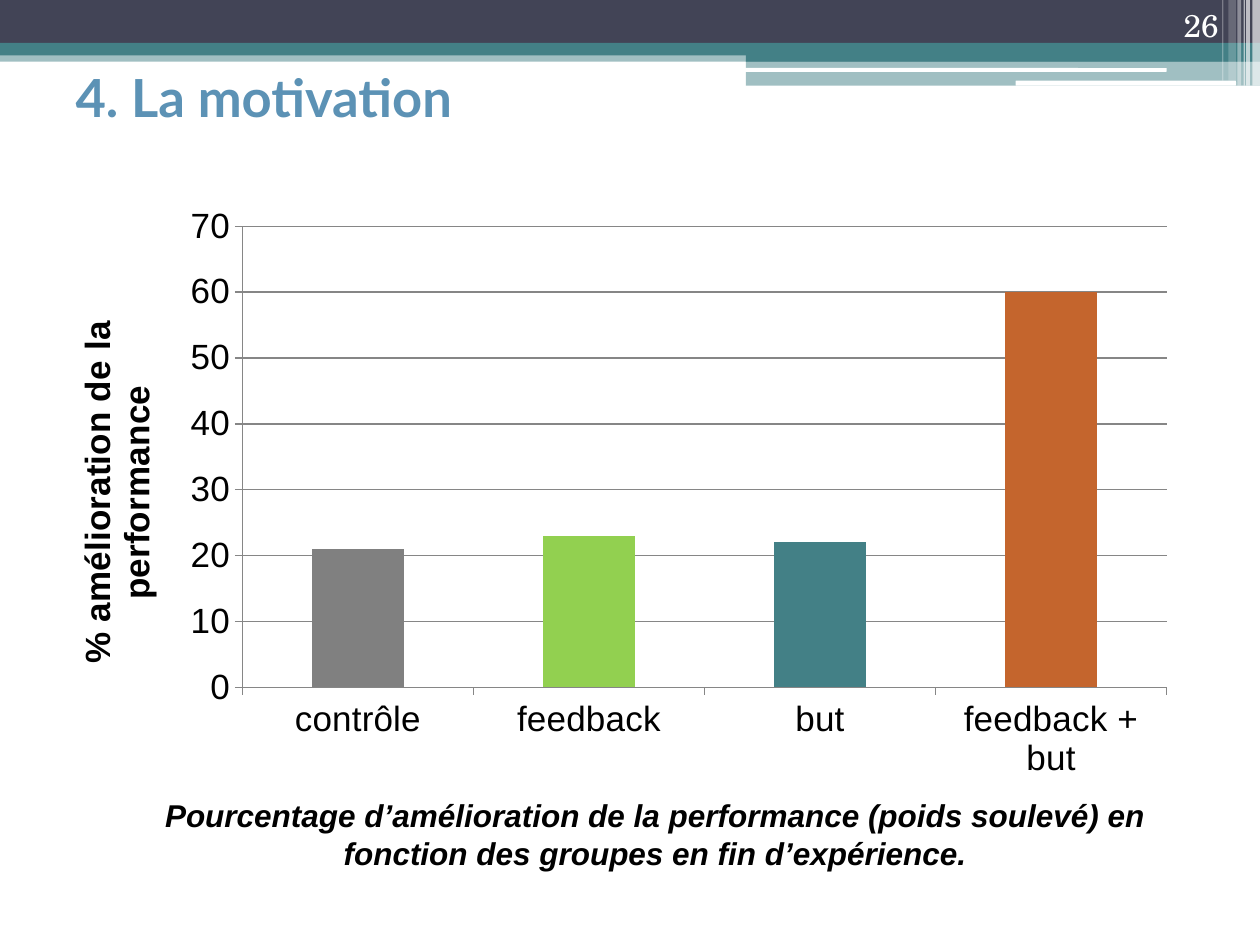
"""Build the motivation slide: banner, title, column chart and caption."""
from typing import NamedTuple

from lxml import etree
from pptx import Presentation
from pptx import util as u
from pptx.chart.data import CategoryChartData
from pptx.dml.color import RGBColor
from pptx.enum import chart as ch
from pptx.enum import shapes, text
from pptx.oxml import parse_xml
from pptx.oxml.ns import nsdecls, qn

WIDTH, HEIGHT = u.Inches(10), u.Inches(7.5)
COLUMNS, ROWS = 100, 75

WHITE = RGBColor(0xFF, 0xFF, 0xFF)
BLACK = RGBColor(0x00, 0x00, 0x00)
SLATE = RGBColor(0x42, 0x44, 0x56)
TEAL = RGBColor(0x43, 0x80, 0x86)
SKY = RGBColor(0x5C, 0x92, 0xB5)
INDIGO = RGBColor(0x53, 0x54, 0x8A)
GREY = RGBColor(0x80, 0x80, 0x80)
GREEN = RGBColor(0x92, 0xD0, 0x50)
ORANGE = RGBColor(0xC4, 0x65, 0x2D)
AXIS_GREY = RGBColor(0x86, 0x86, 0x86)


class Area(NamedTuple):
    """Place on the grid, in columns and rows."""
    column: float
    row: float
    columns: float
    rows: float

    def box(self) -> tuple[int, int, int, int]:
        """Return left, top, width and height as slide lengths."""
        return (int(WIDTH * self.column / COLUMNS), int(HEIGHT * self.row / ROWS),
                int(WIDTH * self.columns / COLUMNS), int(HEIGHT * self.rows / ROWS))


class Band(NamedTuple):
    """Coloured strip of the banner."""
    area: Area
    color: RGBColor
    opacity: int = 100
    rounded: bool = False


class Style(NamedTuple):
    """Look of a run of text."""
    font: str
    size: float
    color: RGBColor
    bold: bool = False
    italic: bool = False


class Group(NamedTuple):
    """Experimental group and its result."""
    label: str
    gain: int
    color: RGBColor


BANDS = [
    Band(Area(0, 4, 100, 0.9), TEAL, 50),
    Band(Area(0, 0, 100, 3.4), SLATE),
    Band(Area(0, 3.4, 100, 1), TEAL),
    Band(Area(59.2, 3.9, 40.8, 1), TEAL),
    Band(Area(59.2, 4.8, 40.8, 2), TEAL, 50),
    Band(Area(59.1, 5.4, 33.5, 0.3), WHITE, rounded=True),
    Band(Area(80.6, 6.4, 17.5, 0.4), WHITE, rounded=True),
    Band(Area(99.4, 0, 0.6, 6.8), WHITE, 65),
    Band(Area(98.9, 0, 0.3, 6.8), WHITE, 65),
    Band(Area(98.7, 0, 0.1, 6.8), WHITE, 60),
    Band(Area(98.2, 0, 0.3, 6.8), WHITE, 40),
    Band(Area(97.5, 0, 0.6, 6.4), WHITE, 20),
    Band(Area(97, 0, 0.1, 6.4), WHITE, 30),
]
GROUPS = [
    Group("contrôle", 21, GREY),
    Group("feedback", 23, GREEN),
    Group("but", 22, TEAL),
    Group("feedback + but", 60, ORANGE),
]
PLOT_SHARES = {"x": 0.166, "y": 0.052, "w": 0.815, "h": 0.774}


def style_font(font, style: Style) -> None:
    """Apply a style to a font."""
    font.name, font.size = style.font, u.Pt(style.size)
    font.bold, font.italic = style.bold, style.italic
    font.color.rgb = style.color


def write(frame, words: str, style: Style, align, anchor) -> None:
    """Put one styled run in a text frame."""
    frame.word_wrap = True
    frame.auto_size = text.MSO_AUTO_SIZE.NONE
    frame.vertical_anchor = anchor
    paragraph = frame.paragraphs[0]
    paragraph.alignment = align
    run = paragraph.add_run()
    run.text = words
    style_font(run.font, style)


def add_band(slide, band: Band) -> None:
    """Draw one strip of the banner."""
    preset = shapes.MSO_SHAPE.ROUNDED_RECTANGLE if band.rounded else shapes.MSO_SHAPE.RECTANGLE
    strip = slide.shapes.add_shape(preset, *band.area.box())
    strip.shadow.inherit = False
    strip.line.fill.background()
    strip.fill.solid()
    strip.fill.fore_color.rgb = band.color
    if band.opacity < 100:
        color = strip.fill._xPr.find(".//" + qn("a:srgbClr"))
        etree.SubElement(color, qn("a:alpha")).set("val", str(band.opacity * 1000))


def add_text(slide, area: Area, words: str, style: Style, align, anchor) -> None:
    """Add a text box."""
    write(slide.shapes.add_textbox(*area.box()).text_frame, words, style, align, anchor)


def place_plot(chart) -> None:
    """Fix the inner plot area as shares of the chart."""
    edges = "".join(f'<c:{key} val="{share}"/>' for key, share in PLOT_SHARES.items())
    layout = parse_xml(
        f'<c:layout {nsdecls("c")}><c:manualLayout><c:layoutTarget val="inner"/>'
        f'<c:xMode val="edge"/><c:yMode val="edge"/>{edges}</c:manualLayout></c:layout>')
    plot_area = chart._chartSpace.chart.plotArea
    for automatic in plot_area.findall(qn("c:layout")):
        plot_area.remove(automatic)
    plot_area.insert(0, layout)


def add_results(slide, area: Area) -> None:
    """Add the column chart of gains by group."""
    results = CategoryChartData()
    results.categories = [group.label for group in GROUPS]
    results.add_series("Series 1", [group.gain for group in GROUPS])
    chart = slide.shapes.add_chart(
        ch.XL_CHART_TYPE.COLUMN_CLUSTERED, *area.box(), results).chart
    chart.has_legend = chart.has_title = False
    style_font(chart.font, Style("Arial", 20, BLACK))

    plot = chart.plots[0]
    plot.gap_width, plot.vary_by_categories = 150, False
    gains = plot.series[0]
    gains.format.fill.solid()
    gains.format.fill.fore_color.rgb = INDIGO
    for index, group in enumerate(GROUPS):
        fill = gains.points[index].format.fill
        fill.solid()
        fill.fore_color.rgb = group.color

    scale = chart.value_axis
    scale.minimum_scale, scale.maximum_scale, scale.major_unit = 0, 70, 10
    scale.has_major_gridlines = True
    for axis in (chart.category_axis, scale):
        axis.major_tick_mark = ch.XL_TICK_MARK.OUTSIDE
    for line in (chart.category_axis.format.line, scale.format.line,
                 scale.major_gridlines.format.line):
        line.color.rgb, line.width = AXIS_GREY, u.Pt(0.75)
    heading = scale.axis_title.text_frame.paragraphs[0].add_run()
    heading.text = "% amélioration de la performance"
    style_font(heading.font, Style("Arial", 20, BLACK, bold=True))
    place_plot(chart)


def main() -> None:
    """Build and save the slide."""
    deck = Presentation()
    deck.slide_width, deck.slide_height = WIDTH, HEIGHT
    slide = deck.slides.add_slide(deck.slide_layouts[5])
    for band in BANDS:
        add_band(slide, band)
    align, anchor = text.PP_ALIGN, text.MSO_ANCHOR
    add_text(slide, Area(89.4, 0, 8.3, 4), "26",
             Style("TeX Gyre Schola", 18, WHITE), align.RIGHT, anchor.BOTTOM)
    add_results(slide, Area(4.3, 15.5, 90, 47.3))
    title = slide.shapes.title
    title.left, title.top, title.width, title.height = Area(5, 4.6, 90, 6.1).box()
    write(title.text_frame, "4. La motivation",
          Style("Lato", 30, SKY, bold=True), align.LEFT, anchor.MIDDLE)
    add_text(slide, Area(7.5, 62.7, 89, 7.1),
             "Pourcentage d’amélioration de la performance (poids soulevé) en "
             "fonction des groupes en fin d’expérience.",
             Style("Arial", 18, BLACK, bold=True, italic=True), align.CENTER, anchor.TOP)
    deck.save("out.pptx")


if __name__ == "__main__":
    main()
